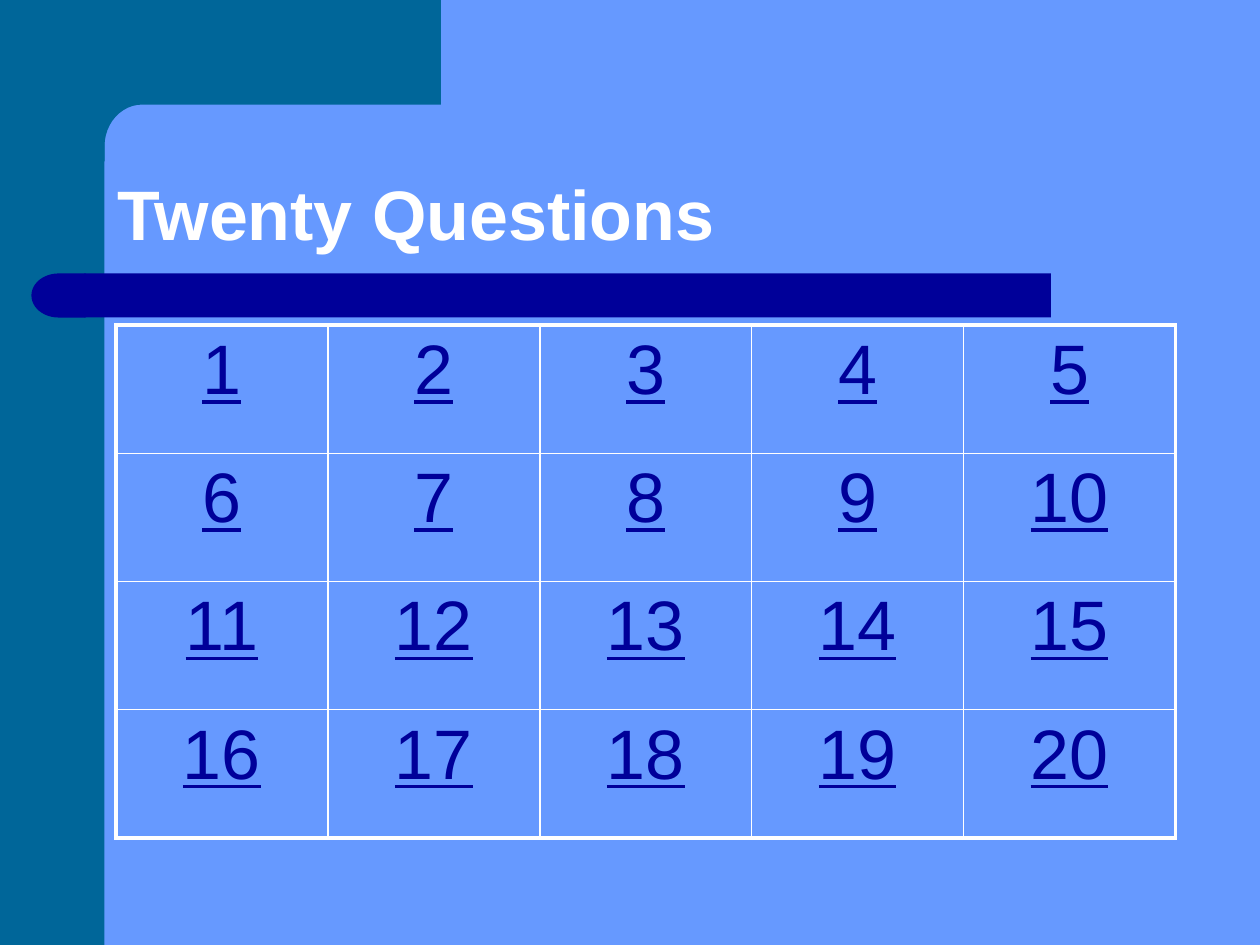
"""Build the Twenty Questions board slide."""
from dataclasses import dataclass
from math import cos, pi, sin

from lxml import etree
from pptx import Presentation
from pptx.dml.color import RGBColor
from pptx.enum.shapes import MSO_SHAPE
from pptx.enum.text import MSO_ANCHOR, MSO_AUTO_SIZE, PP_ALIGN
from pptx.oxml.ns import qn
from pptx.util import Inches, Pt

RECTANGLE = MSO_SHAPE.RECTANGLE
DELAY = MSO_SHAPE.FLOWCHART_DELAY
BOTTOM = MSO_ANCHOR.BOTTOM
NO_FIT = MSO_AUTO_SIZE.NONE
LEFT = PP_ALIGN.LEFT
CENTER = PP_ALIGN.CENTER

SKY = RGBColor(0x66, 0x99, 0xFF)
TEAL = RGBColor(0x00, 0x66, 0x99)
NAVY = RGBColor(0x00, 0x00, 0x99)
WHITE = RGBColor(0xFF, 0xFF, 0xFF)

FONT = "Arial"
ROWS, COLUMNS = 4, 5
INNER_LINE, OUTER_LINE = Pt(1), Pt(2.25)


@dataclass
class Block:
    kind: MSO_SHAPE
    left: float
    top: float
    width: float
    height: float
    color: RGBColor
    flipped: bool = False


BLOCKS = [
    Block(RECTANGLE, 0, 0, 0.83, 7.5, TEAL),
    Block(RECTANGLE, 0.67, 2.17, 7.67, 0.35, NAVY),
    Block(DELAY, 0.25, 2.17, 0.43, 0.35, NAVY, flipped=True),
]


def paint(shape, color: RGBColor) -> None:
    shape.shadow.inherit = False
    shape.fill.solid()
    shape.fill.fore_color.rgb = color
    shape.line.fill.background()


def draw_block(page, block: Block) -> None:
    shape = page.shapes.add_shape(
        block.kind, Inches(block.left), Inches(block.top),
        Inches(block.width), Inches(block.height))
    paint(shape, block.color)
    if block.flipped:
        shape._element.spPr.find(qn("a:xfrm")).set("flipH", "1")


def draw_corner(page) -> None:
    steps = 12
    angles = [pi / 2 * step / steps for step in range(steps + 1)]
    curve = [(1.13 - 0.3 * sin(angle), 1.16 - 0.33 * cos(angle)) for angle in angles]
    outline = [(3.5, 0), (3.5, 0.83), *curve, (0.83, 1.28), (0.5, 1.28), (0.5, 0)]
    points = [(Inches(x), Inches(y)) for x, y in outline]
    builder = page.shapes.build_freeform(*points[0])
    builder.add_line_segments(points[1:], close=True)
    paint(builder.convert_to_shape(), TEAL)


def format_run(run, color: RGBColor) -> None:
    run.font.name = FONT
    run.font.size = Pt(40)
    run.font.color.rgb = color


def write_title(page) -> None:
    title = page.shapes.title
    title.left, title.top = Inches(0.83), Inches(0.83)
    title.width, title.height = Inches(8.67), Inches(1.25)
    frame = title.text_frame
    frame.text = "Twenty Questions"
    frame.auto_size = NO_FIT
    frame.vertical_anchor = BOTTOM
    paragraph = frame.paragraphs[0]
    paragraph.alignment = LEFT
    paragraph.line_spacing = 0.9
    run = paragraph.runs[0]
    format_run(run, WHITE)
    run.font.bold = True
    page.shapes._spTree.append(title._element)


def draw_borders(cell, row: int, column: int) -> None:
    outer_sides = {
        "a:lnL": column == 0,
        "a:lnR": column == COLUMNS - 1,
        "a:lnT": row == 0,
        "a:lnB": row == ROWS - 1,
    }
    properties = cell._tc.get_or_add_tcPr()
    for index, (side, is_outer) in enumerate(outer_sides.items()):
        line = etree.Element(qn(side), w=str(OUTER_LINE if is_outer else INNER_LINE))
        fill = etree.SubElement(line, qn("a:solidFill"))
        etree.SubElement(fill, qn("a:srgbClr"), val=str(WHITE))
        properties.insert(index, line)


def draw_board(page) -> None:
    table = page.shapes.add_table(
        ROWS, COLUMNS, Inches(0.92), Inches(2.58), Inches(8.41), Inches(4.07)).table
    table.first_row = False
    table.horz_banding = False
    for index in range(ROWS * COLUMNS):
        row, column = divmod(index, COLUMNS)
        cell = table.cell(row, column)
        cell.fill.background()
        draw_borders(cell, row, column)
        cell.text_frame.text = str(index + 1)
        paragraph = cell.text_frame.paragraphs[0]
        paragraph.alignment = CENTER
        run = paragraph.runs[0]
        format_run(run, NAVY)
        run.font.underline = True


def main() -> None:
    deck = Presentation()
    deck.slide_width, deck.slide_height = Inches(10), Inches(7.5)
    page = deck.slides.add_slide(deck.slide_layouts.get_by_name("Title Only"))
    page.background.fill.solid()
    page.background.fill.fore_color.rgb = SKY
    draw_corner(page)
    for block in BLOCKS:
        draw_block(page, block)
    write_title(page)
    draw_board(page)
    deck.save("out.pptx")


if __name__ == "__main__":
    main()
